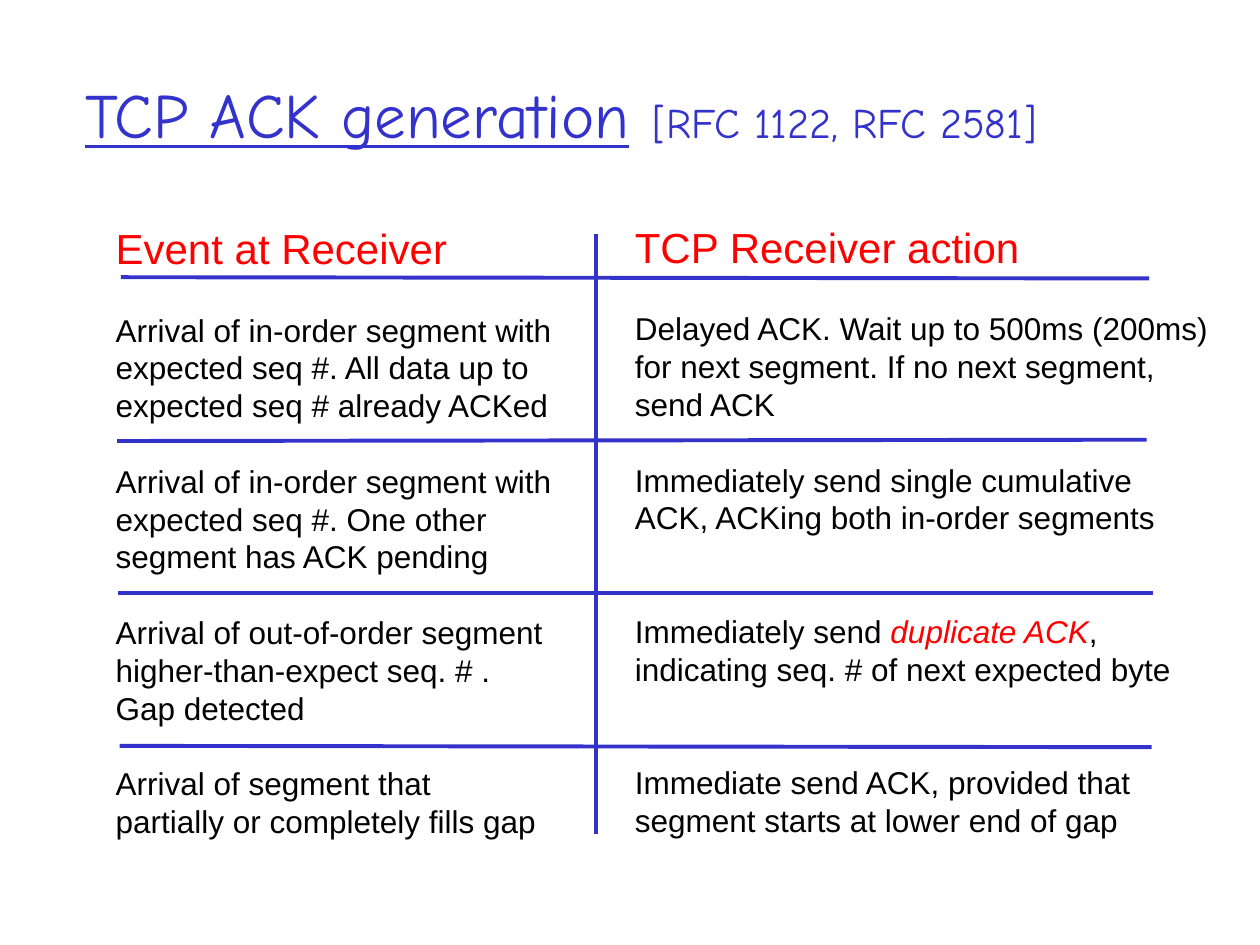
from pptx import Presentation
from pptx.dml.color import RGBColor
from pptx.enum.shapes import MSO_CONNECTOR
from pptx.enum.text import MSO_ANCHOR
from pptx.oxml.ns import qn
from pptx.util import Inches, Pt
from lxml.etree import SubElement

BLUE, RED, BLACK = "3333CC", "FF0000", "000000"
ROW_LINES = 4
LINE_PITCH = 21.6

EVENTS = [
    ["Arrival of in-order segment with", "expected seq #. All data up to",
     "expected seq # already ACKed"],
    ["Arrival of in-order segment with", "expected seq #. One other",
     "segment has ACK pending"],
    ["Arrival of out-of-order segment", "higher-than-expect seq. # .",
     "Gap detected"],
    ["Arrival of segment that", "partially or completely fills gap"],
]
# A line given as a tuple is plain text, emphasised text, plain text.
ACTIONS = [
    ["Delayed ACK. Wait up to 500ms (200ms)",
     "for next segment. If no next segment,", "send ACK"],
    ["Immediately send single cumulative",
     "ACK, ACKing both in-order segments"],
    [("Immediately send ", "duplicate ACK", ","),
     "indicating seq. # of next expected byte"],
    ["Immediate send ACK, provided that",
     "segment starts at lower end of gap"],
]
RULES = [
    (0.96, 2.2, 9.12, 2.21),
    (0.93, 3.5, 9.1, 3.49),
    (0.94, 4.71, 9.15, 4.71),
    (0.95, 5.92, 9.14, 5.93),
    (4.73, 1.86, 4.73, 6.62),
]


def rgb(value):
    return RGBColor.from_string(value)


class SlideBuilder:
    def __init__(self, s, body_font="Arial", title_font="Comic Neue"):
        self.s = s
        self.body_font = body_font
        self.title_font = title_font

    def text_frame(self, left, top, width, height):
        box = self.s.shapes.add_textbox(
            Inches(left), Inches(top), Inches(width), Inches(height))
        return box.text_frame

    def style(self, font, name, size, color):
        font.name, font.size = name, Pt(size)
        font.color.rgb = rgb(color)

    def title(self, main, note):
        tf = self.text_frame(0.58, 0.25, 8.5, 1.25)
        tf.word_wrap = True
        tf.vertical_anchor = MSO_ANCHOR.MIDDLE
        p = tf.paragraphs[0]
        self.style(p.font, self.title_font, 36, BLUE)
        for text, size in ((main, 36), (" ", 40), (note, 24)):
            r = p.add_run()
            r.text = text
            self.style(r.font, self.title_font, size, BLUE)
            r.font.underline = text == main

    def column(self, left, top, width, height, heading, rows):
        """Stack a heading and rows of text, each row taking the same height."""
        tf = self.text_frame(left, top, width, height)
        tf.word_wrap = False
        p = tf.paragraphs[0]
        p.text = heading
        p.line_spacing = Pt(30)
        self.style(p.font, self.body_font, 24, RED)
        gap = 1
        for lines in rows:
            for i, line in enumerate(lines):
                p = tf.add_paragraph()
                p.line_spacing = Pt(LINE_PITCH)
                p.space_before = Pt(0 if i else gap * LINE_PITCH)
                self.style(p.font, self.body_font, 18, BLACK)
                self.fill_line(p, line)
            gap = ROW_LINES - len(lines)

    def fill_line(self, p, line):
        if isinstance(line, str):
            p.text = line
            return
        for i, text in enumerate(line):
            r = p.add_run()
            r.text = text
            if i == 1:
                r.font.italic = True
                r.font.color.rgb = rgb(RED)

    def rule(self, x1, y1, x2, y2):
        line = self.s.shapes.add_connector(
            MSO_CONNECTOR.STRAIGHT, Inches(x1), Inches(y1), Inches(x2), Inches(y2))
        line.line.color.rgb = rgb(BLUE)
        line.line.width = Pt(2.25)
        SubElement(line._element.spPr, qn("a:effectLst"))


def main():
    prs = Presentation()
    prs.slide_width, prs.slide_height = Inches(10), Inches(7.5)
    slide = SlideBuilder(prs.slides.add_slide(prs.slide_layouts[6]))
    slide.title("TCP ACK generation", "[RFC 1122, RFC 2581]")
    slide.column(0.82, 1.7, 3.66, 5.47, "Event at Receiver", EVENTS)
    slide.column(4.94, 1.69, 4.79, 5.52, "TCP Receiver action", ACTIONS)
    for ends in RULES:
        slide.rule(*ends)
    prs.save("out.pptx")


if __name__ == "__main__":
    main()
